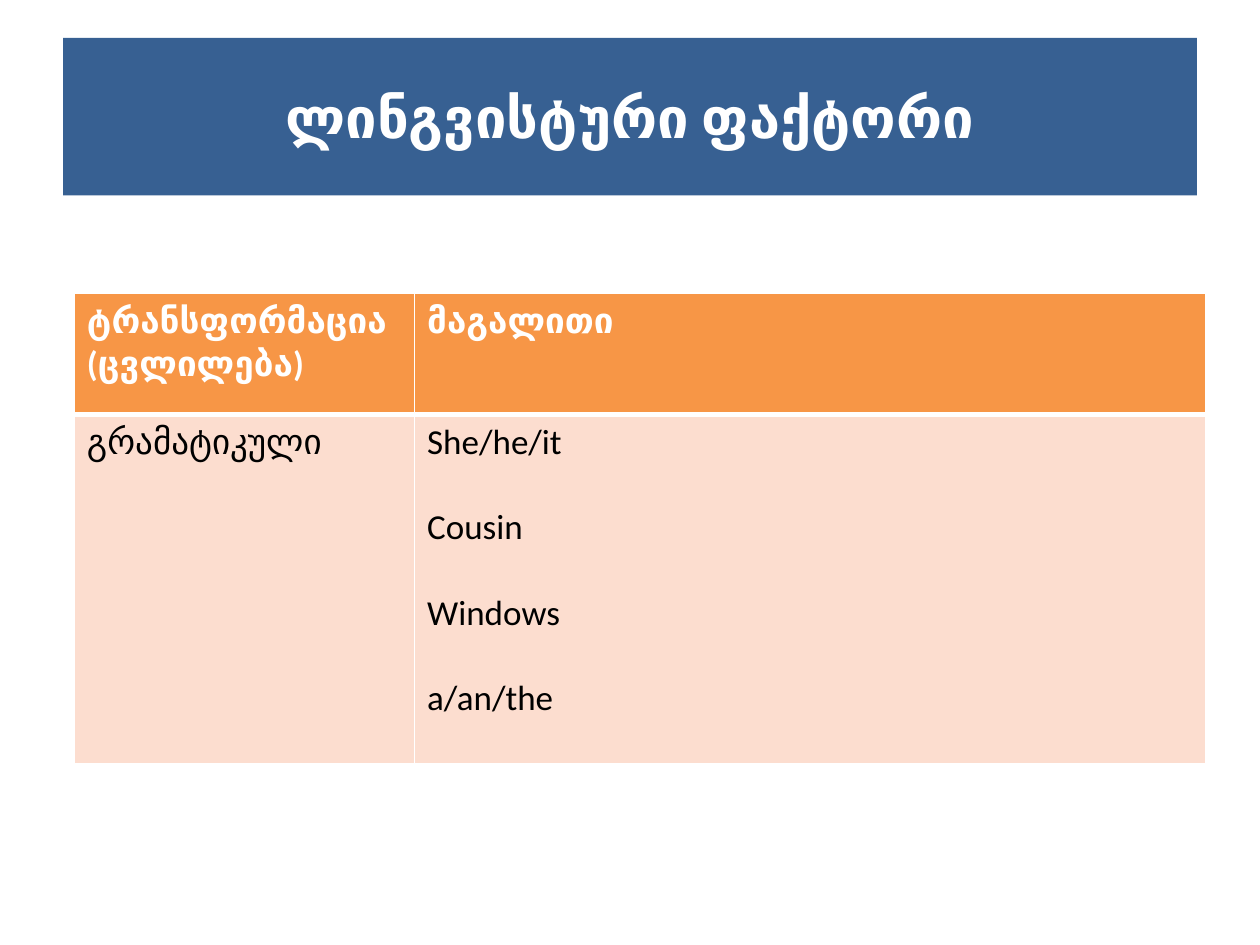
from lxml import etree
from pptx import Presentation
from pptx import util as u
from pptx.dml.color import RGBColor
from pptx.enum import text
from pptx.oxml import ns

COLORS = {"banner": "376092", "header": "F79646", "body": "FCDDCF",
          "white": "FFFFFF", "black": "000000"}

deck = Presentation()
deck.slide_width, deck.slide_height = u.Inches(10), u.Inches(7.5)
W, H = deck.slide_width, deck.slide_height
page = deck.slides.add_slide(deck.slide_layouts[5])


def write(frame, lines, size=20, color="black", bold=False, align=text.PP_ALIGN.LEFT, gap=0):
    for i, line in enumerate(lines):
        para = frame.add_paragraph() if i else frame.paragraphs[0]
        para.alignment = align
        para.space_before = u.Pt(gap if i else 0)
        span = para.add_run()
        span.text = line
        span.font.name = "Calibri"
        span.font.size = u.Pt(size)
        span.font.bold = bold
        span.font.color.rgb = RGBColor.from_string(COLORS[color])


def add_borders(cell, **widths):
    props = cell._tc.get_or_add_tcPr()
    for side, points in widths.items():
        line = etree.SubElement(props, ns.qn(f"a:ln{side}"), w=str(u.Pt(points)))
        fill = etree.SubElement(line, ns.qn("a:solidFill"))
        etree.SubElement(fill, ns.qn("a:srgbClr"), val=COLORS["white"])


# Title banner
title = page.shapes.title
title.left, title.top = int(W * 0.05), int(H * 0.04)
title.width, title.height = int(W * 0.9), int(H / 6)
title.fill.solid()
title.fill.fore_color.rgb = RGBColor.from_string(COLORS["banner"])
title.text_frame.vertical_anchor = text.MSO_ANCHOR.MIDDLE
write(title.text_frame, ["ლინგვისტური ფაქტორი"], size=32, color="white", bold=True,
      align=text.PP_ALIGN.CENTER)

# Table of transformations and examples
columns, rows = [2.7, 6.28], [0.96, 2.77]
content = [
    [["ტრანსფორმაცია", "(ცვლილება)"], ["მაგალითი"]],
    [["გრამატიკული"], ["She/he/it", "Cousin", "Windows", "a/an/the"]],
]
table = page.shapes.add_table(len(rows), len(columns), u.Inches(0.59), u.Inches(2.33),
                              u.Inches(sum(columns)), u.Inches(sum(rows))).table
for column, width in zip(table.columns, columns):
    column.width = u.Inches(width)

for r, (height, line_groups) in enumerate(zip(rows, content)):
    table.rows[r].height = u.Inches(height)
    header = r == 0
    for c, lines in enumerate(line_groups):
        cell = table.cell(r, c)
        # The rule under the header is heavier than the others
        add_borders(cell, L=1, R=1, T=1 if header else 3, B=3 if header else 1)
        cell.fill.solid()
        cell.fill.fore_color.rgb = RGBColor.from_string(COLORS["header" if header else "body"])
        write(cell.text_frame, lines, color="white" if header else "black", bold=header,
              gap=0 if header else 24.4)

deck.save("out.pptx")
